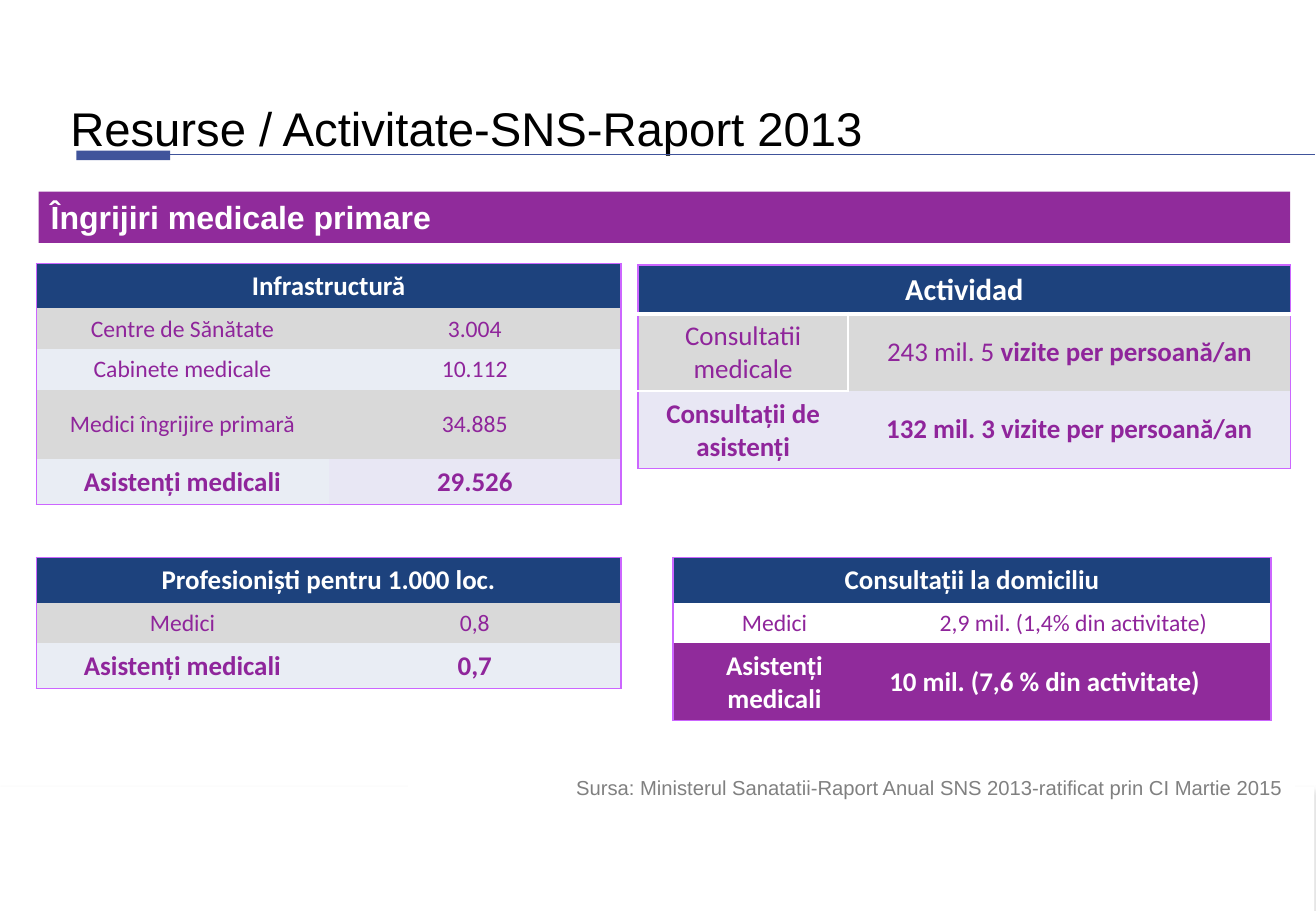
from dataclasses import dataclass

from lxml import etree
from pptx import Presentation
from pptx.dml.color import RGBColor
from pptx.enum.shapes import MSO_CONNECTOR, MSO_SHAPE
from pptx.enum.text import MSO_ANCHOR, PP_ALIGN
from pptx.oxml.ns import qn
from pptx.util import Cm, Pt

RECT, LINE = MSO_SHAPE.RECTANGLE, MSO_CONNECTOR.STRAIGHT
LEFT, CENTER, RIGHT = PP_ALIGN.LEFT, PP_ALIGN.CENTER, PP_ALIGN.RIGHT
TOP, MIDDLE = MSO_ANCHOR.TOP, MSO_ANCHOR.MIDDLE


@dataclass(frozen=True)
class Theme:
    white: str = "FFFFFF"
    black: str = "000000"
    gray: str = "808080"
    blue: str = "40549B"
    navy: str = "1D427D"
    plum: str = "902B9B"
    ink: str = "8F259B"
    edge: str = "CC66FF"
    dark: str = "D9D9D9"
    pale: str = "E9EDF4"
    lilac: str = "E8E7F4"
    head: str = "Arial"
    body: str = "Calibri"
    title: int = 28
    band: int = 19
    large: int = 18
    strong: int = 16
    plain: int = 14
    note: int = 12


T = Theme()


@dataclass
class Row:
    """One table row; a cell is a string or a list of (text, bold) runs."""
    height: float
    cells: tuple
    fills: tuple
    size: int = T.plain
    bold: bool = False
    color: str = T.ink
    aligns: tuple = (CENTER, CENTER)


def header(text, height=0.94, size=T.strong):
    return Row(height, (text, ""), (T.navy,) * 2, size, True, T.white)


def write(par, text, align=LEFT, color=T.black, **font):
    par.alignment = align
    run = par.add_run()
    run.text = text
    for key, value in font.items():
        setattr(run.font, key, value)
    run.font.color.rgb = RGBColor.from_string(color)


def block(slide, box, fill):
    shape = slide.shapes.add_shape(RECT, *map(Cm, box))
    shape.shadow.inherit = False
    shape.fill.solid()
    shape.fill.fore_color.rgb = RGBColor.from_string(fill)
    shape.line.fill.background()
    shape.text_frame.vertical_anchor = TOP
    shape.text_frame.word_wrap = True
    return shape


def footer(slide, box):
    """White base with a soft shadow."""
    shape = block(slide, box, T.white)
    effects = shape.element.spPr.find(qn("a:effectLst"))
    shade = etree.SubElement(effects, qn("a:outerShdw"), blurRad=str(Pt(3.1)),
                             dist=str(Pt(1.8)), dir="5400000", rotWithShape="0")
    color = etree.SubElement(shade, qn("a:srgbClr"), val=T.gray)
    etree.SubElement(color, qn("a:alpha"), val="35000")


def title(slide, box, text):
    left, top, width, height = box
    frame = slide.shapes.add_textbox(*map(Cm, box)).text_frame
    frame.word_wrap = True
    par = frame.paragraphs[0]
    par.line_spacing = 1.1
    write(par, text, name=T.head, size=Pt(T.title))
    block(slide, (left + 0.38, top + 1.32, 1.96, 0.2), T.blue)
    level = Cm(top + 1.4)
    rule = slide.shapes.add_connector(LINE, Cm(left + 0.71), level, Cm(27.48), level)
    rule.line.color.rgb = RGBColor.from_string(T.blue)
    rule.line.width = Pt(0.75)
    etree.SubElement(rule.element.spPr, qn("a:effectLst"))


def label(slide, box, text, fill, align, color, **font):
    shape = block(slide, box, fill)
    write(shape.text_frame.paragraphs[0], text, align, color, name=T.head, **font)


def border(cell, edges):
    """Set the left, right, top and bottom lines; None means no line."""
    props = cell._tc.get_or_add_tcPr()
    for spot, (side, edge) in enumerate(edges.items()):
        color, width = edge or (None, 0)
        line = etree.Element(qn("a:ln" + side), w=str(Pt(width)))
        if color:
            fill = etree.SubElement(line, qn("a:solidFill"))
            etree.SubElement(fill, qn("a:srgbClr"), val=color)
        else:
            etree.SubElement(line, qn("a:noFill"))
        props.insert(spot, line)


def fill_cell(cell, row, col):
    form = dict(margin_left=Cm(0.28), margin_right=Cm(0.28), margin_top=Cm(0.13),
                margin_bottom=Cm(0.13), vertical_anchor=MIDDLE)
    for key, value in form.items():
        setattr(cell, key, value)
    if row.fills[col]:
        cell.fill.solid()
        cell.fill.fore_color.rgb = RGBColor.from_string(row.fills[col])
    else:
        cell.fill.background()
    item = row.cells[col]
    for text, bold in [(item, row.bold)] if isinstance(item, str) else item:
        if text:
            write(cell.text_frame.paragraphs[0], text, row.aligns[col], row.color,
                  name=T.body, size=Pt(row.size), bold=bold)


def grid(slide, spot, cols, rows, rules=None):
    """Table with a merged header; rules add lines inside its outer frame."""
    box = (*spot, sum(cols), sum(row.height for row in rows))
    table = slide.shapes.add_table(len(rows), len(cols), *map(Cm, box)).table
    for col, width in enumerate(cols):
        table.columns[col].width = Cm(width)
    outer = (T.edge, 1)
    for r, row in enumerate(rows):
        table.rows[r].height = Cm(row.height)
        for c in range(len(cols)):
            cell = table.cell(r, c)
            fill_cell(cell, row, c)
            frame = dict(L=c == 0, R=c == len(cols) - 1 or r == 0,
                         T=r == 0, B=r == len(rows) - 1)
            edges = {side: outer if on else None for side, on in frame.items()}
            border(cell, edges | (rules or {}).get((r, c), {}))
    table.cell(0, 0).merge(table.cell(0, len(cols) - 1))


def build(slide):
    dark, pale, lilac = (T.dark,) * 2, (T.pale,) * 2, (T.lilac,) * 2
    half = (6.11, 6.11)
    thick, thin = (T.white, 3), (T.white, 1)

    footer(slide, (0, 16.46, 27.48, 2.59))
    title(slide, (1.22, 1.83, 25.83, 2.54), "Resurse / Activitate-SNS-Raport 2013")
    label(slide, (0.81, 4.01, 26.16, 1.07), "Îngrijiri medicale primare", T.plum,
          LEFT, T.white, size=Pt(T.band), bold=True)
    grid(slide, (0.76, 5.51), half, [
        header("Infrastructură"),
        Row(0.84, ("Centre de Sănătate", "3.004"), dark),
        Row(0.84, ("Cabinete medicale", "10.112"), pale),
        Row(1.45, ("Medici îngrijire primară", "34.885"), dark),
        Row(0.94, ("Asistenți medicali", "29.526"), (T.pale, T.lilac), T.strong, True),
    ])
    visits = [("243 mil. 5 ", False), ("vizite per persoană/an", True)]
    grid(slide, (13.34, 5.54), (4.39, 9.25), [
        header("Actividad", 1.02, T.large),
        Row(1.6, ("Consultatii medicale", visits), dark, T.strong),
        Row(1.6, ("Consultații de asistenți", "132 mil. 3 vizite per persoană/an"),
            lilac, T.strong, True),
    ], {(0, 0): dict(B=thick), (0, 1): dict(B=thick),
        (1, 0): dict(T=thick, R=thin, B=thin), (1, 1): dict(T=thick, L=thin),
        (2, 0): dict(T=thin)})
    label(slide, (8.53, 16.08, 18.54, 0.76),
          "Sursa: Ministerul Sanatatii-Raport Anual SNS 2013-ratificat prin CI Martie 2015",
          T.white, RIGHT, T.gray, size=Pt(T.note))
    grid(slide, (0.76, 11.66), half, [
        header("Profesioniști pentru 1.000 loc."),
        Row(0.84, ("Medici", "0,8"), dark),
        Row(0.94, ("Asistenți medicali", "0,7"), pale, T.strong, True),
    ])
    grid(slide, (14.07, 11.66), (4.24, 8.26), [
        header("Consultații la domiciliu"),
        Row(0.84, ("Medici", "2,9 mil. (1,4% din activitate)"), (None, None)),
        Row(1.6, ("Asistenți medicali", "10 mil. (7,6 % din activitate)"),
            (T.plum,) * 2, T.strong, True, T.white, (CENTER, LEFT)),
    ])


def main():
    deck = Presentation()
    deck.slide_width, deck.slide_height = Cm(27.51), Cm(19.05)
    build(deck.slides.add_slide(deck.slide_layouts[6]))
    deck.save("out.pptx")


if __name__ == "__main__":
    main()
